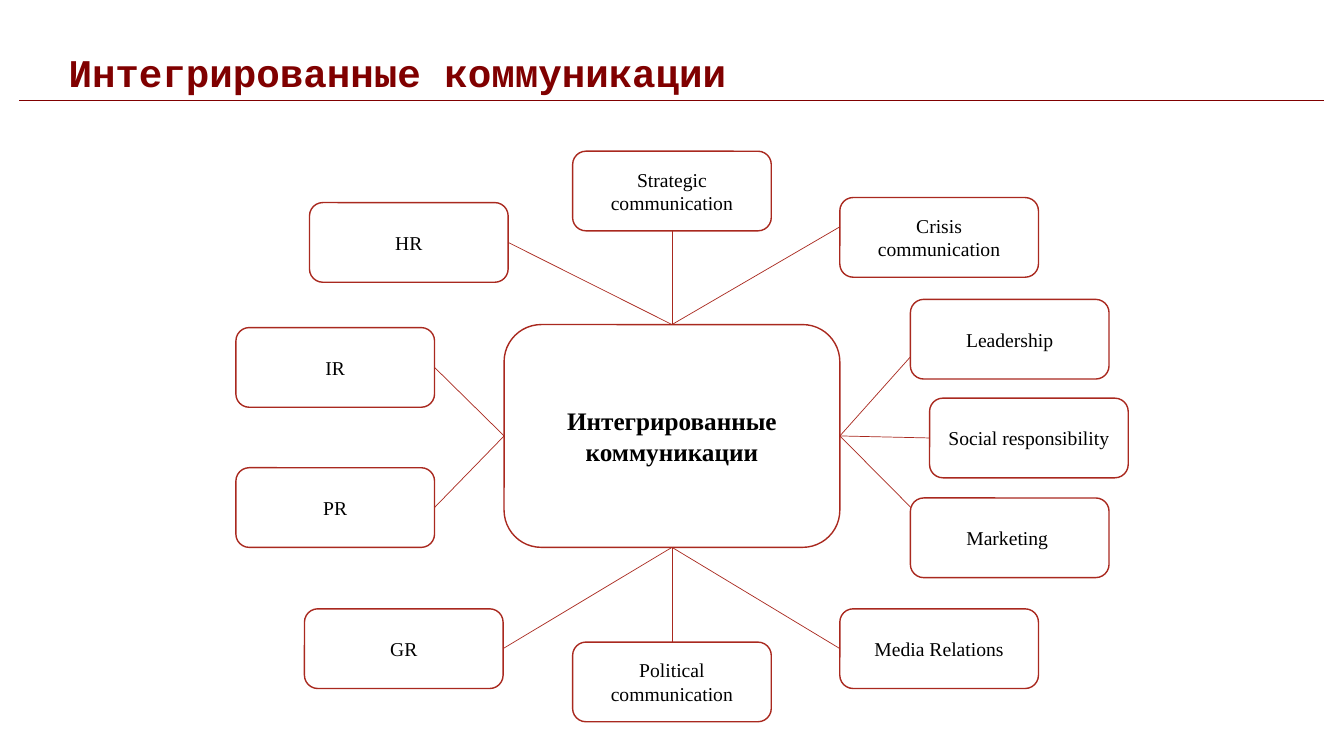
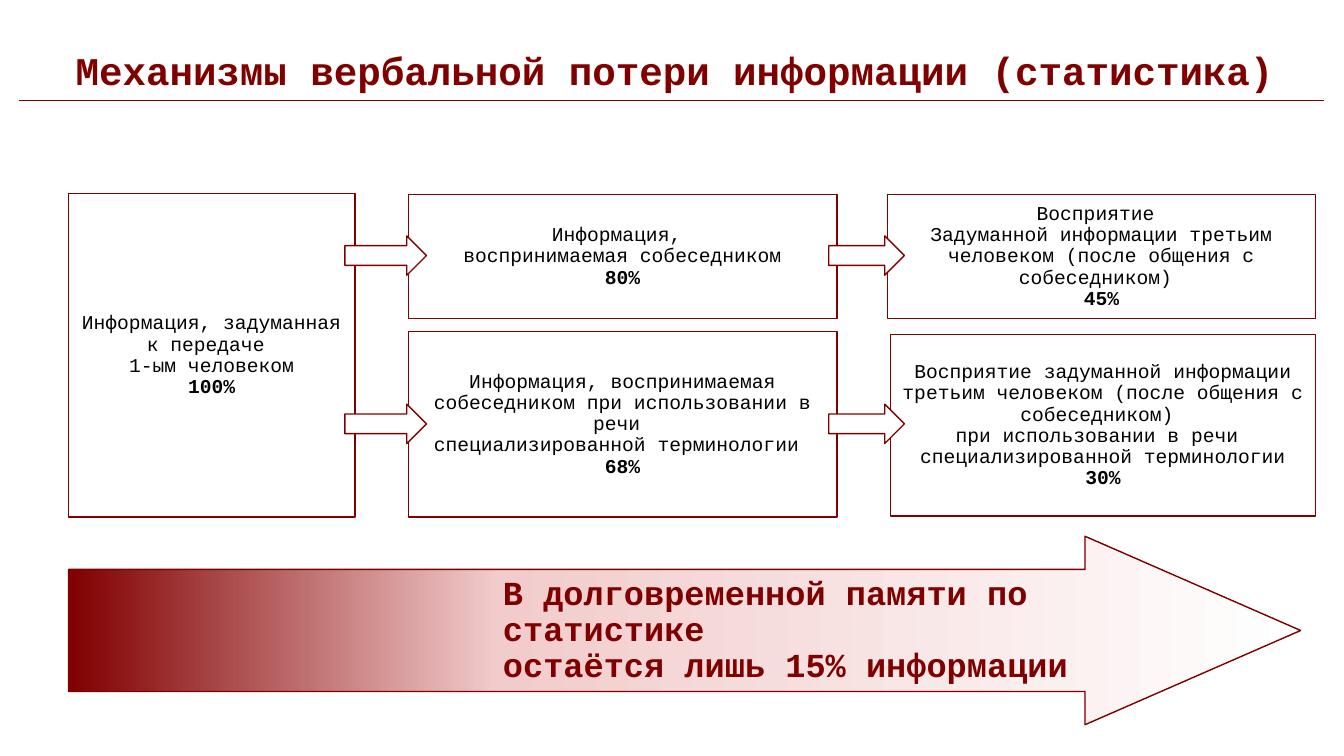
from copy import deepcopy
from dataclasses import dataclass

from lxml.etree import SubElement
from pptx import Presentation
from pptx.dml.color import RGBColor
from pptx.enum.shapes import MSO_CONNECTOR, MSO_SHAPE
from pptx.enum.text import MSO_ANCHOR, PP_ALIGN
from pptx.oxml.ns import qn
from pptx.util import Inches, Pt

TOP, LEFT, BOTTOM, RIGHT = range(4)


@dataclass(frozen=True)
class Theme:
    maroon: RGBColor = RGBColor(0x80, 0x00, 0x00)
    brick: RGBColor = RGBColor(0xA9, 0x29, 0x1F)
    pink: RGBColor = RGBColor(0xF2, 0xCC, 0xCC)
    white: RGBColor = RGBColor(0xFF, 0xFF, 0xFF)
    black: RGBColor = RGBColor(0x00, 0x00, 0x00)
    mono: str = "Courier New"
    serif: str = "Times New Roman"
    title_size: int = 28
    banner_size: int = 24
    hub_size: int = 18
    body_size: int = 14
    outline: float = 1
    hairline: float = 0.5
    tight: float = 0.9


def apply(target, values):
    """Set every attribute named in a dict of format values."""
    for name, value in values.items():
        setattr(target, name, value)


class Deck:
    def __init__(self, theme):
        self.theme = theme
        self.presentation = Presentation()
        apply(self.presentation, {"slide_width": Inches(13.33), "slide_height": Inches(7.5)})
        self.slide = None

    def new_slide(self, title, left, top):
        """Start a slide with its title and the rule below it."""
        theme = self.theme
        self.slide = self.presentation.slides.add_slide(self.presentation.slide_layouts[6])
        self.line((0.19, 1), (13.13, 1), theme.maroon)
        box = self.slide.shapes.add_textbox(Inches(left), Inches(top), Inches(12.46), Inches(0.4))
        self.add_text(box, [title], self.font(theme.title_size, theme.mono, theme.maroon, True),
                      {"line_spacing": theme.tight}, (0.04, 0.02))

    def font(self, size, name, color, bold=False):
        return {"size": Pt(size), "name": name, "bold": bold, "color": color}

    def add_text(self, shape, lines, font, layout, margins=(0.1, 0.05), bold_last=False, indent=0):
        frame = shape.text_frame
        side, edge = map(Inches, margins)
        apply(frame, {"word_wrap": True, "vertical_anchor": MSO_ANCHOR.MIDDLE,
                      "margin_left": side, "margin_right": side,
                      "margin_top": edge, "margin_bottom": edge})
        for index, line in enumerate(lines):
            paragraph = frame.paragraphs[0] if index == 0 else frame.add_paragraph()
            apply(paragraph, layout)
            if indent:
                properties = paragraph._p.get_or_add_pPr()
                properties.set("marL", str(Inches(indent)))
                properties.set("indent", "0")
            run = paragraph.add_run()
            run.text = line
            apply(run.font, {key: value for key, value in font.items() if key != "color"})
            run.font.color.rgb = font["color"]
            if bold_last and index == len(lines) - 1:
                run.font.bold = True

    def shape(self, kind, box, outline):
        shape = self.slide.shapes.add_shape(kind, *map(Inches, box))
        shape.shadow.inherit = False
        shape.fill.solid()
        shape.fill.fore_color.rgb = self.theme.white
        shape.line.color.rgb = outline
        shape.line.width = Pt(self.theme.outline)
        return shape

    def line(self, start, end, color):
        connector = self.slide.shapes.add_connector(
            MSO_CONNECTOR.STRAIGHT, *map(Inches, (*start, *end)))
        connector.line.color.rgb = color
        connector.line.width = Pt(self.theme.hairline)
        SubElement(connector._element.spPr, qn("a:effectLst"))
        return connector

    def node(self, lines, box, size, bold=False):
        """Rounded box of the communication map."""
        theme = self.theme
        shape = self.shape(MSO_SHAPE.ROUNDED_RECTANGLE, box, theme.brick)
        self.add_text(shape, lines, self.font(size, theme.serif, theme.black, bold),
                      {"alignment": PP_ALIGN.CENTER})
        return shape

    def spoke(self, hub, hub_side, node, target):
        """Join the hub to a side of a node, or to a free point on its edge."""
        joined = isinstance(target, int)
        point = (0, 0) if joined else target
        connector = self.line(point, point, self.theme.brick)
        connector.begin_connect(hub, hub_side)
        if joined:
            connector.end_connect(node, target)

    def panel(self, lines, box):
        """Square box whose last line is a bold percentage."""
        theme = self.theme
        shape = self.shape(MSO_SHAPE.RECTANGLE, box, theme.maroon)
        self.add_text(shape, lines, self.font(theme.body_size, theme.mono, theme.black),
                      {"alignment": PP_ALIGN.CENTER, "line_spacing": theme.tight},
                      (0.1, 0.1), bold_last=True)

    def arrow(self, box):
        return self.shape(MSO_SHAPE.RIGHT_ARROW, box, self.theme.maroon)

    def banner(self, lines, box, indent):
        """Wide arrow with a three-stop gradient."""
        theme = self.theme
        shape = self.arrow(box)
        shape.adjustments[0], shape.adjustments[1] = 0.648, 1.144
        shape.fill.gradient()
        shape.fill.gradient_angle = 0
        stop_list = shape._element.spPr.find(qn("a:gradFill")).find(qn("a:gsLst"))
        stop_list.insert(1, deepcopy(stop_list[0]))
        stops = ((0, theme.maroon), (0.35, theme.pink), (1, theme.white))
        for stop, (position, color) in zip(shape.fill.gradient_stops, stops):
            stop.position = position
            stop.color.rgb = color
        self.add_text(shape, lines, self.font(theme.banner_size, theme.mono, theme.maroon, True),
                      {"alignment": PP_ALIGN.LEFT, "line_spacing": theme.tight}, indent=indent)


def communication_map(deck):
    deck.new_slide("Интегрированные коммуникации", 0.64, 0.54)
    hub = deck.node(["Интегрированные", "коммуникации"], (5, 3.22, 3.33, 2.21),
                    deck.theme.hub_size, bold=True)
    # Label, left, top, side of the hub, side of the node or free point
    nodes = (
        ("Strategic communication", 5.68, 1.5, TOP, BOTTOM),
        ("HR", 3.07, 2.01, TOP, RIGHT),
        ("Crisis communication", 8.33, 1.96, TOP, (8.33, 2.25)),
        ("IR", 2.34, 3.25, LEFT, RIGHT),
        ("PR", 2.34, 4.64, LEFT, RIGHT),
        ("Leadership", 9.03, 2.97, RIGHT, (9.03, 3.54)),
        ("Social responsibility", 9.22, 3.95, RIGHT, LEFT),
        ("Marketing ", 9.03, 4.94, RIGHT, (9.03, 5.03)),
        ("GR", 3.02, 6.04, BOTTOM, RIGHT),
        ("Political communication", 5.68, 6.37, BOTTOM, TOP),
        ("Media Relations", 8.33, 6.04, BOTTOM, LEFT),
    )
    for label, left, top, hub_side, target in nodes:
        node = deck.node([label], (left, top, 1.97, 0.79), deck.theme.body_size)
        deck.spoke(hub, hub_side, node, target)


def information_loss(deck):
    deck.new_slide("Механизмы вербальной потери информации (статистика)", 0.71, 0.52)
    # Stages of the message
    panels = (
        ((0.68, 1.92, 2.84, 3.21),
         ["Информация, задуманная ", "к передаче ", "1-ым человеком", "100%"]),
        ((4.05, 1.93, 4.25, 1.23),
         ["Информация, ", "воспринимаемая собеседником", "80%"]),
        ((4.05, 3.29, 4.25, 1.84),
         ["Информация, воспринимаемая собеседником при использовании в речи ",
          "специализированной терминологии ", "68%"]),
        ((8.8, 1.93, 4.25, 1.23),
         ["Восприятие ",
          "Задуманной информации третьим человеком (после общения с собеседником) ", "45%"]),
        ((8.83, 3.32, 4.22, 1.8),
         ["Восприятие задуманной информации третьим человеком (после общения с собеседником) ",
          "при использовании в речи ", "специализированной терминологии", "30%"]),
    )
    for box, lines in panels:
        deck.panel(lines, box)
    # Arrows between the stages
    for left, width in ((3.42, 0.81), (8.22, 0.75)):
        for top in (2.34, 4.01):
            deck.arrow((left, top, width, 0.39))
    # Conclusion
    deck.banner(["В долговременной памяти по статистике", "остаётся лишь 15% информации"],
                (0.68, 5.32, 12.22, 1.87), indent=4.21)


def main():
    deck = Deck(Theme())
    communication_map(deck)
    information_loss(deck)
    deck.presentation.save("out.pptx")


if __name__ == "__main__":
    main()
